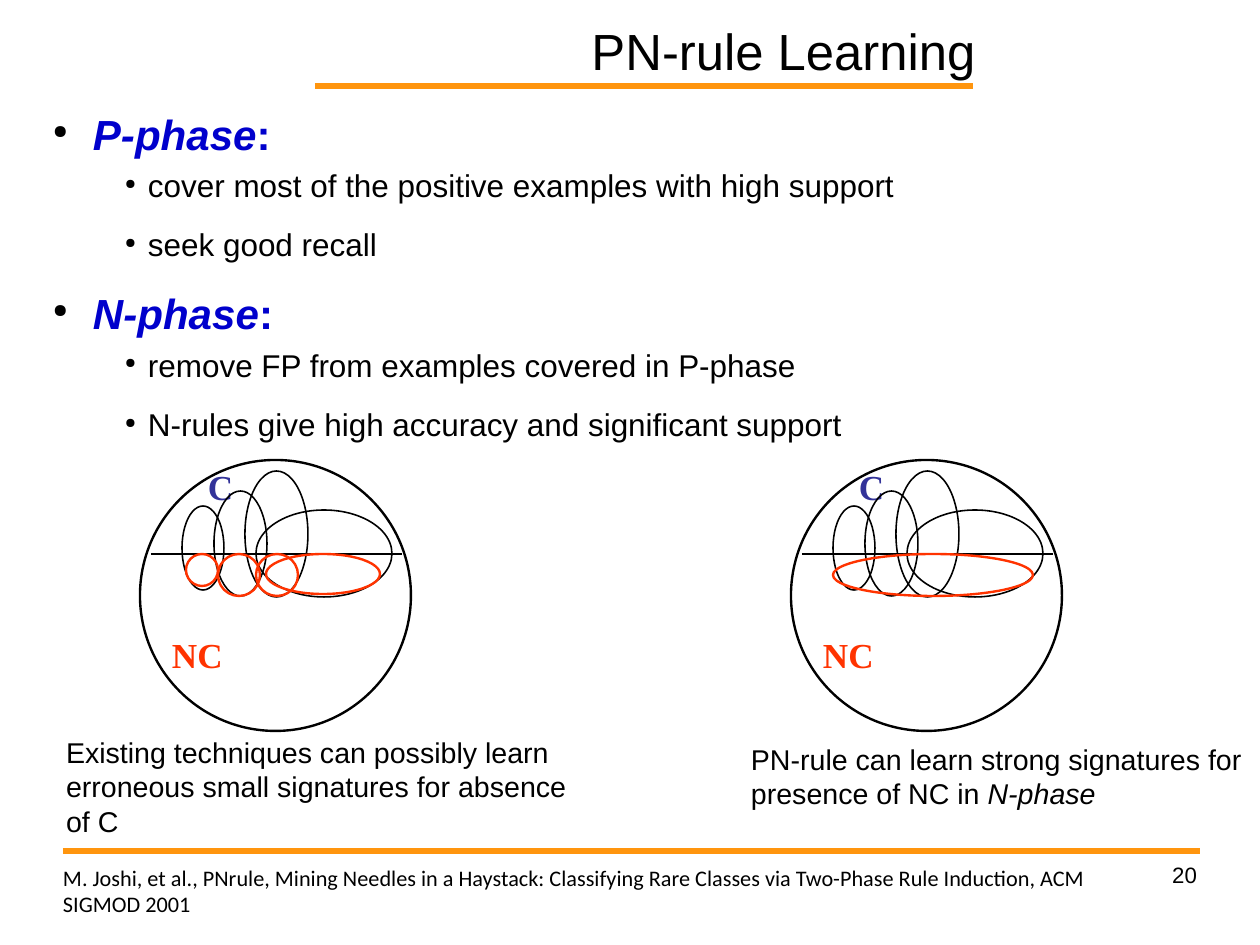
from lxml.etree import SubElement
from pptx import Presentation
from pptx.dml.color import RGBColor
from pptx.enum.shapes import MSO_CONNECTOR as CONNECTOR, MSO_SHAPE as SHAPE
from pptx.enum.text import MSO_ANCHOR as ANCHOR, MSO_AUTO_SIZE as AUTOSIZE, PP_ALIGN as ALIGN
from pptx.oxml.ns import qn
from pptx.util import Emu, Pt

PX = 8000  # EMU per px
BLACK, ORANGE, RED, BLUE, INDIGO = "000000", "FF950E", "FF3300", "0000CC", "333399"


def px(*lengths):
    return [Emu(length * PX) for length in lengths]


def color(hex_value):
    return RGBColor.from_string(hex_value)


class SlideBuilder:
    font_name = "Arial"
    inset = (13, 7)

    def __init__(self, slide):
        self.slide = slide
        self.shapes = slide.shapes

    def style(self, paragraph, size, ink=BLACK, bold=False, font_name=None):
        font = paragraph.font
        font.name = font_name or self.font_name
        font.size, font.bold = Pt(size), bold
        font.color.rgb = color(ink)

    def frame(self, shape, inset):
        frame = shape.text_frame
        frame.word_wrap = True
        frame.auto_size = AUTOSIZE.NONE
        frame.margin_left, frame.margin_top = px(*inset)
        frame.margin_right, frame.margin_bottom = px(*inset)
        return frame

    def title(self, text, box, size):
        holder = self.shapes.title
        holder.left, holder.top, holder.width, holder.height = px(*box)
        frame = self.frame(holder, (0, 0))
        frame.vertical_anchor = ANCHOR.MIDDLE
        paragraph = frame.paragraphs[0]
        paragraph.text, paragraph.alignment = text, ALIGN.RIGHT
        self.style(paragraph, size)

    def text(self, text, box, size, italic_end="", inset=None, align=ALIGN.LEFT, **look):
        frame = self.frame(self.shapes.add_textbox(*px(*box)), inset or self.inset)
        paragraph = frame.paragraphs[0]
        paragraph.alignment = align
        paragraph.add_run().text = text
        if italic_end:
            ending = paragraph.add_run()
            ending.text, ending.font.italic = italic_end, True
        self.style(paragraph, size, **look)

    def bullet(self, paragraph, margin, hanging):
        props = paragraph._p.get_or_add_pPr()
        props.set("marL", str(margin * PX))
        props.set("indent", str(-hanging * PX))
        SubElement(SubElement(props, qn("a:buClr")), qn("a:srgbClr"), val=BLACK)
        SubElement(props, qn("a:buSzPct"), val="45000")
        SubElement(props, qn("a:buChar"), char="●")

    def outline(self, sections, box):
        frame = self.frame(self.shapes.add_textbox(*px(*box)), (0, 0))
        for number, (heading, points) in enumerate(sections):
            phase = frame.add_paragraph() if number else frame.paragraphs[0]
            self.bullet(phase, 40, 40)
            if number:
                phase.space_before = Pt(6.6)
            name, colon = phase.add_run(), phase.add_run()
            name.text, name.font.italic = heading, True
            colon.text = ":"
            self.style(phase, 26.5, BLUE, bold=True)
            for point in points:
                detail = frame.add_paragraph()
                detail.text, detail.level = point, 1
                self.bullet(detail, 95, 23)
                detail.space_before, detail.space_after = Pt(5), Pt(8.5)
                self.style(detail, 19.8)

    def line(self, start, end, ink, weight):
        connector = self.shapes.add_connector(CONNECTOR.STRAIGHT, *px(*start, *end))
        connector.line.color.rgb = color(ink)
        connector.line.width = Pt(weight)
        SubElement(connector._element.spPr, qn("a:effectLst"))

    def ellipse(self, box, ink=BLACK, weight=1.5):
        oval = self.shapes.add_shape(SHAPE.OVAL, *px(*box))
        oval.shadow.inherit = False
        oval.fill.background()
        oval.line.color.rgb = color(ink)
        oval.line.width = Pt(weight)

    def rule_diagram(self, left, negative_rules):
        """Class C above the divider, NC below; rule boxes are relative to left."""
        divider = 554
        self.ellipse((left, 460, 271, 271))
        self.line((left + 11, divider), (left + 262, divider), BLACK, 1.5)
        for label, x, y, width, ink, inset in (
            ("C", 55, 458, 53, INDIGO, self.inset),
            ("NC", 32, 626, 73, RED, (0, 7)),
        ):
            self.text(label, (left + x, y, width, 56), 22.1, inset=inset,
                      ink=ink, bold=True, font_name="Times New Roman")
        positive_rules = ((42, 506, 42, 84), (74, 491, 53, 105),
                          (105, 471, 63, 126), (116, 510, 136, 87))
        for x, y, width, height in positive_rules:
            self.ellipse((left + x, y, width, height), weight=1)
        for x, width, height in negative_rules:
            self.ellipse((left + x, divider, width, height), RED)


def main():
    deck = Presentation()
    deck.slide_width, deck.slide_height = px(1260, 945)
    page = SlideBuilder(deck.slides.add_slide(deck.slide_layouts[5]))

    # Title and orange rules
    page.line((315, 86), (973, 86), ORANGE, 4.31)
    page.line((63, 851), (1200, 851), ORANGE, 4.31)
    page.title("PN-rule Learning", (389, 10, 587, 80), 32)

    # The two phases
    page.outline((
        ("P-phase", ("cover most of the positive examples with high support",
                     "seek good recall")),
        ("N-phase", ("remove FP from examples covered in P-phase",
                     "N-rules give high accuracy and significant support")),
    ), (53, 108, 1186, 306))

    # Existing techniques beside PN-rule
    page.rule_diagram(140, ((46, 32, 32), (78, 42, 42), (116, 42, 42), (126, 114, 40)))
    page.rule_diagram(791, ((42, 200, 42),))
    page.text("Existing techniques can possibly learn erroneous small signatures "
              "for absence of C", (53, 728, 535, 117), 18)
    page.text("PN-rule can learn strong signatures for presence of NC in ",
              (738, 735, 522, 82), 18, italic_end="N-phase")

    # Citation and page number
    page.text("M. Joshi, et al., PNrule, Mining Needles in a Haystack: Classifying Rare "
              "Classes via Two-Phase Rule Induction, ACM SIGMOD 2001",
              (50, 857, 1112, 67), 14, font_name="Calibri")
    page.text("20", (903, 861, 294, 65), 14, inset=(0, 0), align=ALIGN.RIGHT)

    deck.save("out.pptx")


if __name__ == "__main__":
    main()
